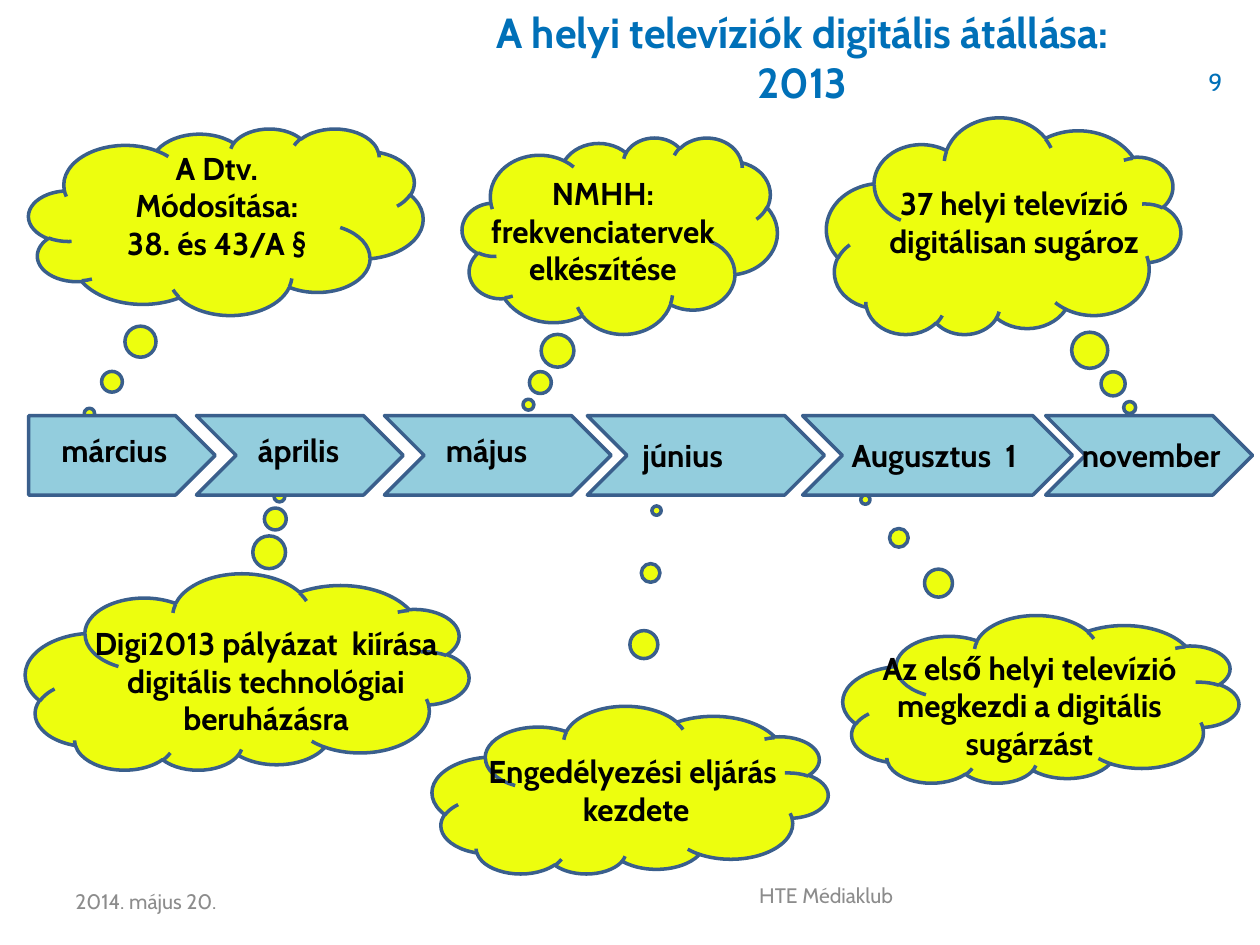
from pptx import Presentation
from pptx.dml.color import RGBColor
from pptx.enum.shapes import MSO_SHAPE
from pptx.enum.text import MSO_ANCHOR, PP_ALIGN
from pptx.util import Cm, Pt

CLOUD = MSO_SHAPE.CLOUD_CALLOUT
PLATE = MSO_SHAPE.PENTAGON
CHEVRON = MSO_SHAPE.CHEVRON
LEFT, CENTER, RIGHT = PP_ALIGN.LEFT, PP_ALIGN.CENTER, PP_ALIGN.RIGHT
TOP, MIDDLE = MSO_ANCHOR.TOP, MSO_ANCHOR.MIDDLE

BLUE = RGBColor(0x00, 0x70, 0xB8)
GRAY = RGBColor(0x8C, 0x8C, 0x8C)
BLACK = RGBColor(0x00, 0x00, 0x00)
YELLOW = RGBColor(0xED, 0xFE, 0x0E)
AQUA = RGBColor(0x93, 0xCD, 0xDD)
NAVY = RGBColor(0x3A, 0x5F, 0x8C)


class Board:
    font = "Cabin"
    edge = Pt(2)

    def __init__(self, slide):
        self.slide = slide

    def shape(self, kind, box, fill):
        item = self.slide.shapes.add_shape(kind, *map(Cm, box))
        item.shadow.inherit = False
        item.fill.solid()
        item.fill.fore_color.rgb = fill
        item.line.color.rgb = NAVY
        item.line.width = self.edge
        return item

    def cloud(self, box, tail, turn):
        item = self.shape(CLOUD, box, YELLOW)
        item.rotation = turn
        for i, value in enumerate(tail):
            item.adjustments[i] = value

    def arrow(self, kind, left, width):
        self.shape(kind, (left, 8.38, width, 1.6), AQUA)

    def text(self, box, lines, size=18, color=BLACK, bold=True,
             align=CENTER, anchor=TOP):
        frame = self.slide.shapes.add_textbox(*map(Cm, box)).text_frame
        frame.word_wrap = True
        frame.vertical_anchor = anchor
        frame.text = lines
        style = {"name": self.font, "size": Pt(size), "bold": bold}
        for para in frame.paragraphs:
            para.alignment = align
            for run in para.runs:
                for key, value in style.items():
                    setattr(run.font, key, value)
                run.font.color.rgb = color


# Clouds: box, tail tip, rotation, text box, text
CLOUDS = [
    ((0.58, 2.59, 7.95, 3.76), (-0.346, 1.028), 0,
     (1.73, 2.87, 5.28, 2.57), "A Dtv. Módosítása:\n38. és 43/A §"),
    ((0.51, 11.58, 8.94, 3.96), (-0.073, 0.897), 180,
     (1.3, 12.45, 8.13, 3.33),
     "Digi2013 pályázat  kiírása digitális technológiai beruházásra"),
    ((9.32, 2.77, 6.35, 3.96), (-0.29, 0.861), 0,
     (9.63, 3.38, 5.05, 3.33), "NMHH: frekvenciatervek elkészítése"),
    ((8.71, 14.25, 7.98, 3.38), (-0.067, 1.671), 180,
     (9.5, 15.04, 6.65, 1.8), "Engedélyezési eljárás  kezdete"),
    ((16.99, 12.42, 7.98, 3.38), (0.443, 1.195), 180,
     (16.69, 12.95, 8.13, 2.57),
     "Az első helyi televízió megkezdi a digitális sugárzást"),
    ((16.66, 2.39, 7.14, 4.37), (-0.356, -0.833), 180,
     (17.27, 3.58, 6.35, 1.8), "37 helyi televízió digitálisan sugároz"),
]

# Months: arrow left and width, label left, top and width, name
MONTHS = [
    (0.58, 3.76, 0.99, 8.56, 4.67, "március"),
    (3.96, 4.17, 4.95, 8.56, 2.59, "április"),
    (7.75, 4.57, 8.74, 8.56, 2.39, "május"),
    (11.84, 4.78, 12.7, 8.66, 3.38, "június"),
    (16.18, 5.44, 16.92, 8.66, 4.17, "Augusztus  1"),
    (21.08, 4.17, 21.56, 8.66, 3.38, "november"),
]


def main():
    deck = Presentation()
    deck.slide_width, deck.slide_height = Cm(25.4), Cm(19.05)
    board = Board(deck.slides.add_slide(deck.slide_layouts[6]))

    # Title, page number and footer
    board.text((7.54, 0, 17.27, 2.31),
               "A helyi televíziók digitális átállása:\n2013", 24, BLUE)
    board.text((20.5, 1.22, 4.39, 0.86), "9", 14, BLUE, False, RIGHT)
    board.text((1.27, 17.65, 5.92, 1.02), "2014. május 20.",
               12, GRAY, False, LEFT, MIDDLE)
    board.text((8.69, 17.65, 15.93, 0.79), "HTE Médiaklub",
               12, GRAY, False, CENTER, MIDDLE)

    # Clouds lie behind the timeline
    for box, tail, turn, area, words in CLOUDS:
        board.cloud(box, tail, turn)
        board.text(area, words)

    # Timeline
    for i, (left, width, *_) in enumerate(MONTHS):
        board.arrow(CHEVRON if i else PLATE, left, width)
    for _, _, left, top, width, name in MONTHS:
        board.text((left, top, width, 1.02), name, align=LEFT)

    deck.save("out.pptx")


if __name__ == "__main__":
    main()
